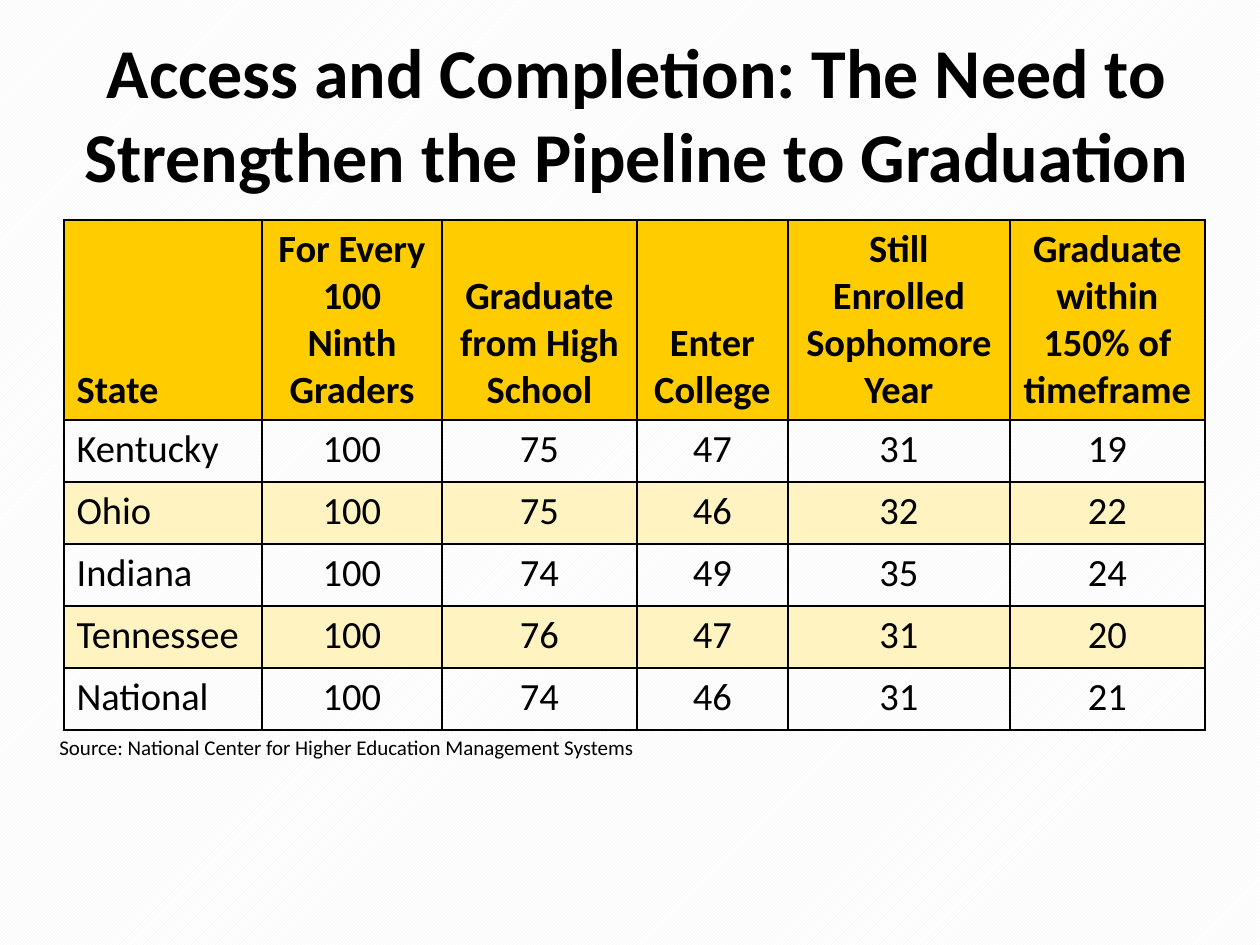
from lxml import etree
from pptx import Presentation
from pptx.dml.color import RGBColor
from pptx.enum import dml, text
from pptx.oxml.ns import qn
from pptx.util import Emu, Pt

TITLE = "Access and Completion: The Need to Strengthen the Pipeline to Graduation"
SOURCE = "Source: National Center for Higher Education Management Systems"
HEADERS = ["State", "For Every 100 Ninth Graders", "Graduate from High School",
           "Enter College", "Still Enrolled Sophomore Year",
           "Graduate within 150% of timeframe"]
STATES = [
    ("Kentucky", 100, 75, 47, 31, 19),
    ("Ohio", 100, 75, 46, 32, 22),
    ("Indiana", 100, 74, 49, 35, 24),
    ("Tennessee", 100, 76, 47, 31, 20),
    ("National", 100, 74, 46, 31, 21),
]
COLUMN_WIDTHS = [198, 180, 195, 151, 222, 195]
HEADER_HEIGHT, ROW_HEIGHT = 200, 62
TABLE_LEFT, TABLE_TOP = 64, 220

FONT = "Calibri"
BLACK = RGBColor(0x00, 0x00, 0x00)
WHITE = RGBColor(0xFF, 0xFF, 0xFF)
GREY = RGBColor(0xF2, 0xF2, 0xF2)
GOLD = RGBColor(0xFF, 0xCC, 0x00)
CREAM = RGBColor(0xFF, 0xF3, 0xC1)


def px(count):
    return Emu(count * 914400 // 126)


def place(shape, left, top, width, height):
    shape.left, shape.top = px(left), px(top)
    shape.width, shape.height = px(width), px(height)


def write(frame, words, size, bold=False, align=text.PP_ALIGN.LEFT):
    paragraph = frame.paragraphs[0]
    paragraph.text = words
    paragraph.alignment = align
    paragraph.font.name = FONT
    paragraph.font.size = Pt(size)
    paragraph.font.bold = bold
    paragraph.font.color.rgb = BLACK


def add_borders(cell):
    properties = cell._tc.get_or_add_tcPr()
    for position, side in enumerate(("lnL", "lnR", "lnT", "lnB")):
        line = etree.Element(qn(f"a:{side}"), w=str(Pt(1)))
        fill = etree.SubElement(line, qn("a:solidFill"))
        etree.SubElement(fill, qn("a:srgbClr"), val=str(BLACK))
        properties.insert(position, line)


deck = Presentation()
deck.slide_width, deck.slide_height = px(1260), px(945)
page = deck.slides.add_slide(deck.slide_layouts[5])

# Hatched background
background = page.background.fill
background.patterned()
background.pattern = dml.MSO_PATTERN.DARK_UPWARD_DIAGONAL
background.fore_color.rgb = GREY
background.back_color.rgb = WHITE

# Title
title = page.shapes.title
place(title, 64, 22, 1145, 178)
title.text_frame.word_wrap = True
title.text_frame.auto_size = text.MSO_AUTO_SIZE.NONE
title.text_frame.vertical_anchor = text.MSO_ANCHOR.TOP
write(title.text_frame, TITLE, 40, True, text.PP_ALIGN.CENTER)

# Table of states
rows = [HEADERS, *STATES]
table_height = HEADER_HEIGHT + ROW_HEIGHT * len(STATES)
table = page.shapes.add_table(
    len(rows), len(HEADERS), px(TABLE_LEFT), px(TABLE_TOP),
    px(sum(COLUMN_WIDTHS)), px(table_height)).table
table.first_row = table.horz_banding = False
for column, width in zip(table.columns, COLUMN_WIDTHS):
    column.width = px(width)
for r, values in enumerate(rows):
    is_header = r == 0
    table.rows[r].height = px(HEADER_HEIGHT if is_header else ROW_HEIGHT)
    for c, value in enumerate(values):
        cell = table.cell(r, c)
        align = text.PP_ALIGN.CENTER if c else text.PP_ALIGN.LEFT
        write(cell.text_frame, str(value), 22, is_header, align)
        cell.vertical_anchor = text.MSO_ANCHOR.BOTTOM if is_header else text.MSO_ANCHOR.TOP
        if is_header or r % 2 == 0:
            cell.fill.solid()
            cell.fill.fore_color.rgb = GOLD if is_header else CREAM
        else:
            cell.fill.background()
        add_borders(cell)

# Source line under the table
source = page.shapes.add_textbox(px(47), px(728), px(703), px(38))
source.text_frame.word_wrap = True
write(source.text_frame, SOURCE, 12)

deck.save("out.pptx")
